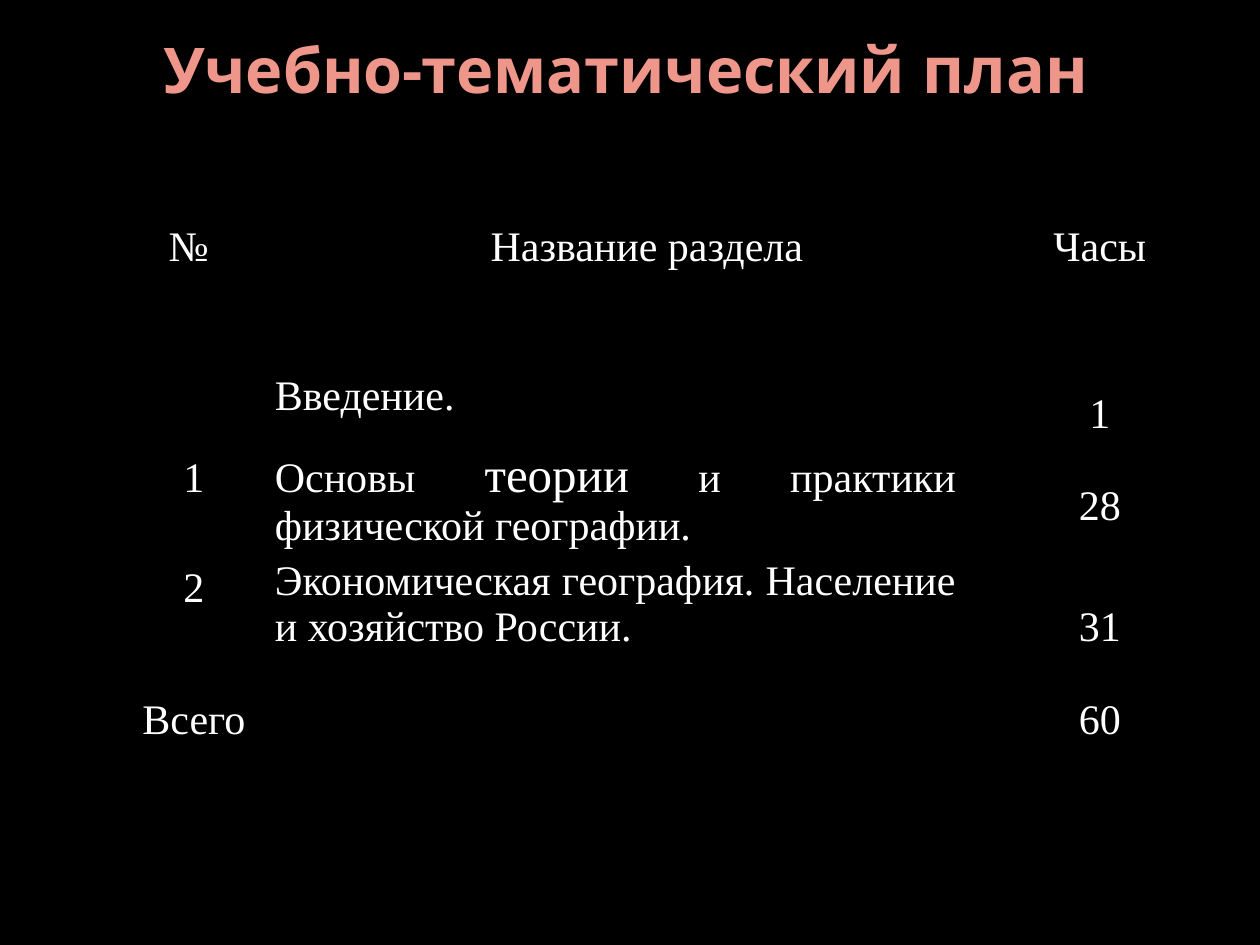
from lxml.etree import SubElement
from pptx import Presentation
from pptx.dml.color import RGBColor
from pptx.enum.text import MSO_ANCHOR, PP_ALIGN
from pptx.oxml.ns import qn
from pptx.util import Cm, Pt

BLACK = RGBColor(0, 0, 0)
WHITE = RGBColor(255, 255, 255)
CORAL = RGBColor(0xEE, 0x96, 0x8A)

# Content: each text is a list of (words, size) runs
TITLE = [("Учебно-тематический", 36), (" план", 36.9)]
ROWS = [
    ([("№ ", 24)], [("Название раздела", 24)], [("Часы", 24)]),
    ([], [("Введение.", 24)], [("1", 24)]),
    ([("1", 24)],
     [("Основы ", 24), ("теории", 28), (" и практики физической географии.", 24)],
     [("28", 24)]),
    ([("2", 24)],
     [("Экономическая география. Население и хозяйство России.", 24)],
     [("31", 24)]),
    ([("Всего", 24)], [], [("60", 24)]),
]
WIDTHS = [4.17, 14.09, 4.17]
HEIGHTS = [3.15, 1.52, 1.52, 2.67, 3.05]
LEFT = 1.19


def add_runs(para, runs, face, color, bold=False):
    for words, size in runs:
        run = para.add_run()
        run.text = words
        font = run.font
        font.name, font.size, font.bold = face, Pt(size), bold
        font.color.rgb = color


def add_edges(cell):
    props = cell._tc.get_or_add_tcPr()
    for spot, side in enumerate(("lnL", "lnR", "lnT", "lnB")):
        line = props.makeelement(qn("a:" + side), {"w": str(Pt(1))})
        fill = SubElement(line, qn("a:solidFill"))
        SubElement(fill, qn("a:srgbClr"), val=str(BLACK))
        props.insert(spot, line)


def fill_cell(cell, runs, row, col):
    cell.fill.background()
    add_edges(cell)
    cell.margin_left = cell.margin_right = Cm(0.18)
    cell.margin_top = cell.margin_bottom = 0
    # Hours of the three sections sit mid-row
    mid = col == 2 and 0 < row < len(ROWS) - 1
    cell.vertical_anchor = MSO_ANCHOR.MIDDLE if mid else MSO_ANCHOR.TOP
    para = cell.text_frame.paragraphs[0]
    if col == 1 and row > 0:
        para.alignment = PP_ALIGN.JUSTIFY
    else:
        para.alignment = PP_ALIGN.CENTER
        para.line_spacing = 1.15
        para._p.get_or_add_pPr().set("marL", str(Cm(1.27)))
    add_runs(para, runs, "Times New Roman", WHITE)


def main():
    deck = Presentation()
    deck.slide_width, deck.slide_height = Cm(25.4), Cm(19.05)
    slide = deck.slides.add_slide(deck.slide_layouts[6])
    back = slide.background.fill
    back.solid()
    back.fore_color.rgb = BLACK

    # Title
    box = slide.shapes.add_textbox(Cm(LEFT), Cm(0.58), Cm(22.86), Cm(3.18))
    frame = box.text_frame
    frame.word_wrap = True
    frame.margin_top = 0
    frame.vertical_anchor = MSO_ANCHOR.TOP
    para = frame.paragraphs[0]
    para.alignment = PP_ALIGN.CENTER
    add_runs(para, TITLE, "Noto Sans", CORAL, bold=True)

    # Plan table
    table = slide.shapes.add_table(
        len(ROWS), len(WIDTHS), Cm(LEFT), Cm(4.37),
        Cm(sum(WIDTHS)), Cm(sum(HEIGHTS))).table
    table.first_row = table.horz_banding = False
    for col, width in zip(table.columns, WIDTHS):
        col.width = Cm(width)
    for row, height in zip(table.rows, HEIGHTS):
        row.height = Cm(height)
    for row, texts in enumerate(ROWS):
        for col, runs in enumerate(texts):
            fill_cell(table.cell(row, col), runs, row, col)

    deck.save("out.pptx")


if __name__ == "__main__":
    main()
